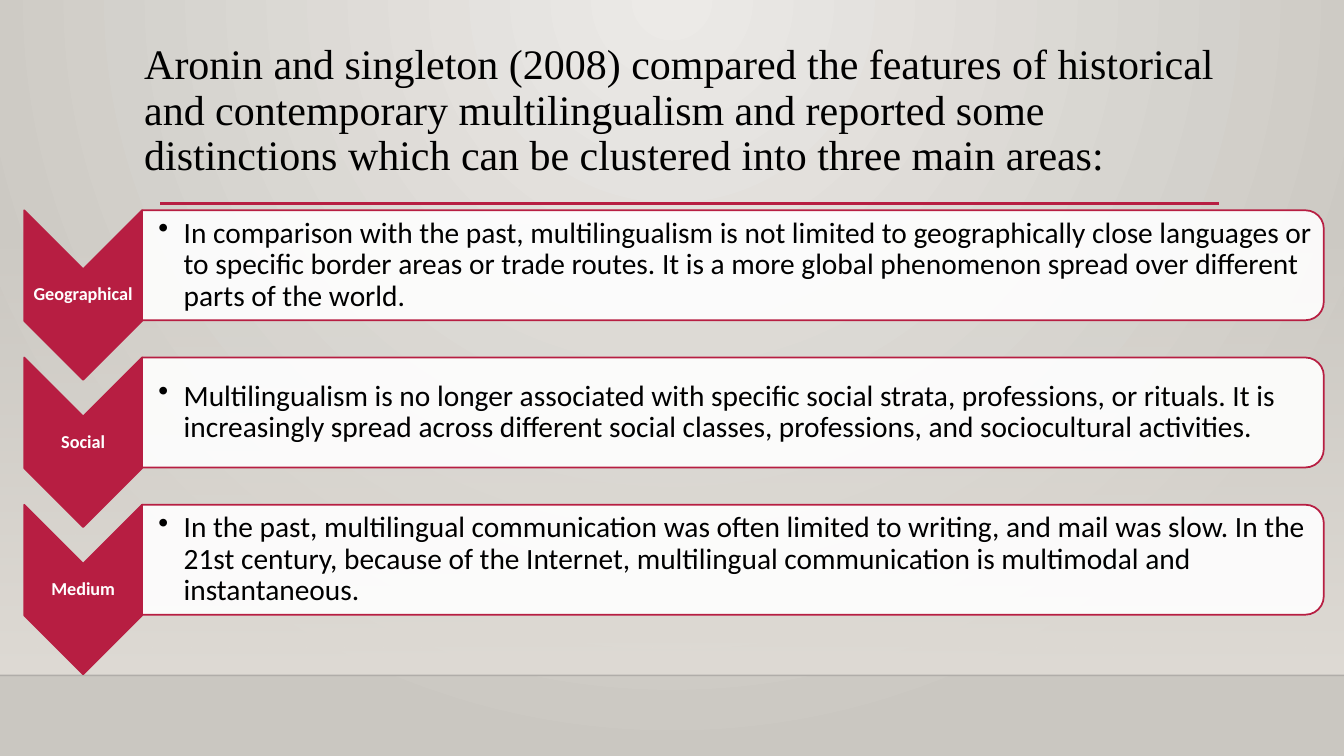
import pptx
import pptx.util
import pptx.dml.color
import pptx.enum.shapes
import pptx.enum.text
import pptx.oxml.ns
from lxml import etree

Cm = pptx.util.Cm
Pt = pptx.util.Pt
SHAPES = pptx.enum.shapes.MSO_SHAPE
ANCHOR = pptx.enum.text.MSO_ANCHOR
ALIGN = pptx.enum.text.PP_ALIGN
qn = pptx.oxml.ns.qn

CRIMSON = "B71E42"
SAND = "DFDBD5"
SLIDE_WIDTH, SLIDE_HEIGHT = 33.87, 19.05
FLOOR_TOP = 17.02

AREAS = [
    ("Geographical",
     "In comparison with the past, multilingualism is not limited to geographically close "
     "languages or to specific border areas or trade routes. It is a more global phenomenon "
     "spread over different parts of the world."),
    ("Social",
     "Multilingualism is no longer associated with specific social strata, professions, or "
     "rituals. It is increasingly spread across different social classes, professions, and "
     "sociocultural activities."),
    ("Medium",
     "In the past, multilingual communication was often limited to writing, and mail was slow. "
     "In the 21st century, because of the Internet, multilingual communication is multimodal "
     "and instantaneous."),
]


def rgb(value):
    return pptx.dml.color.RGBColor.from_string(value)


def set_alpha(colour, percent):
    etree.SubElement(colour, qn("a:alpha"), val=str(percent * 1000))


def set_gradient(fill, start, end):
    fill.gradient()
    for stop, value in zip(fill.gradient_stops, (start, end)):
        stop.color.rgb = rgb(value)


def add_rule(slide, left, top, right, colour, weight):
    rule = slide.shapes.add_connector(
        pptx.enum.shapes.MSO_CONNECTOR.STRAIGHT, Cm(left), Cm(top), Cm(right), Cm(top))
    rule.line.color.rgb = rgb(colour)
    rule.line.width = Pt(weight)
    etree.SubElement(rule._element.spPr, qn("a:effectLst"))
    return rule


def add_backdrop(slide):
    set_gradient(slide.background.fill, "ECEAE7", "CAC7C1")
    gradient = slide._element.find(".//" + qn("a:gradFill"))
    gradient.remove(gradient.find(qn("a:lin")))
    radial = etree.SubElement(gradient, qn("a:path"), path="circle")
    etree.SubElement(radial, qn("a:fillToRect"), l="43000", t="0", r="43000", b="100000")

    top = 5.61
    wall = slide.shapes.add_shape(
        SHAPES.RECTANGLE, 0, Cm(top), Cm(SLIDE_WIDTH), Cm(FLOOR_TOP - top))
    wall.shadow.inherit = False
    wall.line.fill.background()
    set_gradient(wall.fill, SAND, SAND)
    wall.fill.gradient_angle = 270
    set_alpha(wall._element.find(".//" + qn("a:srgbClr")), 0)

    floor_edge = add_rule(slide, 0, FLOOR_TOP, SLIDE_WIDTH, "000001", 1)
    set_alpha(floor_edge._element.find(".//" + qn("a:srgbClr")), 20)


def add_heading(slide, left, top, width, height):
    title = slide.shapes.title
    title.left, title.top, title.width, title.height = map(Cm, (left, top, width, height))
    frame = title.text_frame
    frame.text = (
        "Aronin and singleton (2008) compared the features of historical and contemporary "
        "multilingualism and reported some distinctions which can be clustered into three "
        "main areas:")
    frame.word_wrap = True
    frame.auto_size = pptx.enum.text.MSO_AUTO_SIZE.NONE
    frame.vertical_anchor = ANCHOR.TOP
    paragraph = frame.paragraphs[0]
    paragraph.alignment = ALIGN.LEFT
    paragraph.line_spacing = 0.9
    format_font(paragraph, "Times New Roman", 30, "000000")


def format_font(paragraph, name, size, colour, bold=False):
    for run in paragraph.runs:
        run.font.name = name
        run.font.size = Pt(size)
        run.font.bold = bold
        run.font.color.rgb = rgb(colour)


def add_turned_shape(slide, kind, left, top, width, height, fill):
    shape = slide.shapes.add_shape(
        kind, Cm(left + (width - height) / 2), Cm(top + (height - width) / 2),
        Cm(height), Cm(width))
    shape.rotation = 90
    shape.shadow.inherit = False
    shape.fill.solid()
    shape.fill.fore_color.rgb = rgb(fill)
    shape.line.color.rgb = rgb(CRIMSON)
    shape.line.width = Pt(1.25)
    return shape


def add_text(slide, left, top, width, height, text, inset):
    frame = slide.shapes.add_textbox(Cm(left), Cm(top), Cm(width), Cm(height)).text_frame
    frame.word_wrap = True
    frame.vertical_anchor = ANCHOR.MIDDLE
    frame.margin_left = Cm(inset)
    frame.margin_top = frame.margin_right = frame.margin_bottom = Cm(0.03)
    frame.text = text
    paragraph = frame.paragraphs[0]
    paragraph.line_spacing = 0.9
    return paragraph


def add_area(slide, left, top, width, height, area, description):
    arrow_width, panel_height = 2.97, 2.77
    panel_left, panel_width = left + arrow_width, width - arrow_width

    add_turned_shape(slide, SHAPES.CHEVRON, left, top, arrow_width, height, CRIMSON)
    label = add_text(slide, left, top + arrow_width / 2, arrow_width,
                     height - arrow_width, area, 0.03)
    label.alignment = ALIGN.CENTER
    format_font(label, "Calibri", 13, "FFFFFF", True)

    panel = add_turned_shape(slide, SHAPES.ROUND_2_SAME_RECTANGLE, panel_left, top,
                             panel_width, panel_height, "FFFFFF")
    set_alpha(panel._element.find(".//" + qn("a:srgbClr")), 90)
    bullet = add_text(slide, panel_left, top + 0.14, panel_width - 0.13,
                      panel_height - 0.28, description, 0.41)
    properties = bullet._p.get_or_add_pPr()
    properties.set("marL", str(Cm(0.64)))
    properties.set("indent", str(-Cm(0.64)))
    etree.SubElement(properties, qn("a:buChar"), char="•")
    format_font(bullet, "Calibri", 21, "000000")


def main():
    deck = pptx.Presentation()
    deck.slide_width, deck.slide_height = Cm(SLIDE_WIDTH), Cm(SLIDE_HEIGHT)
    slide = deck.slides.add_slide(deck.slide_layouts[5])
    add_backdrop(slide)
    add_rule(slide, 4.04, 5.13, 30.73, CRIMSON, 2.5)
    add_heading(slide, 3.38, 0.97, 28.12, 3.94)
    for row, (area, description) in enumerate(AREAS):
        add_area(slide, 0.61, 5.3 + row * 3.71, 32.75, 4.27, area, description)
    deck.save("out.pptx")


if __name__ == "__main__":
    main()
